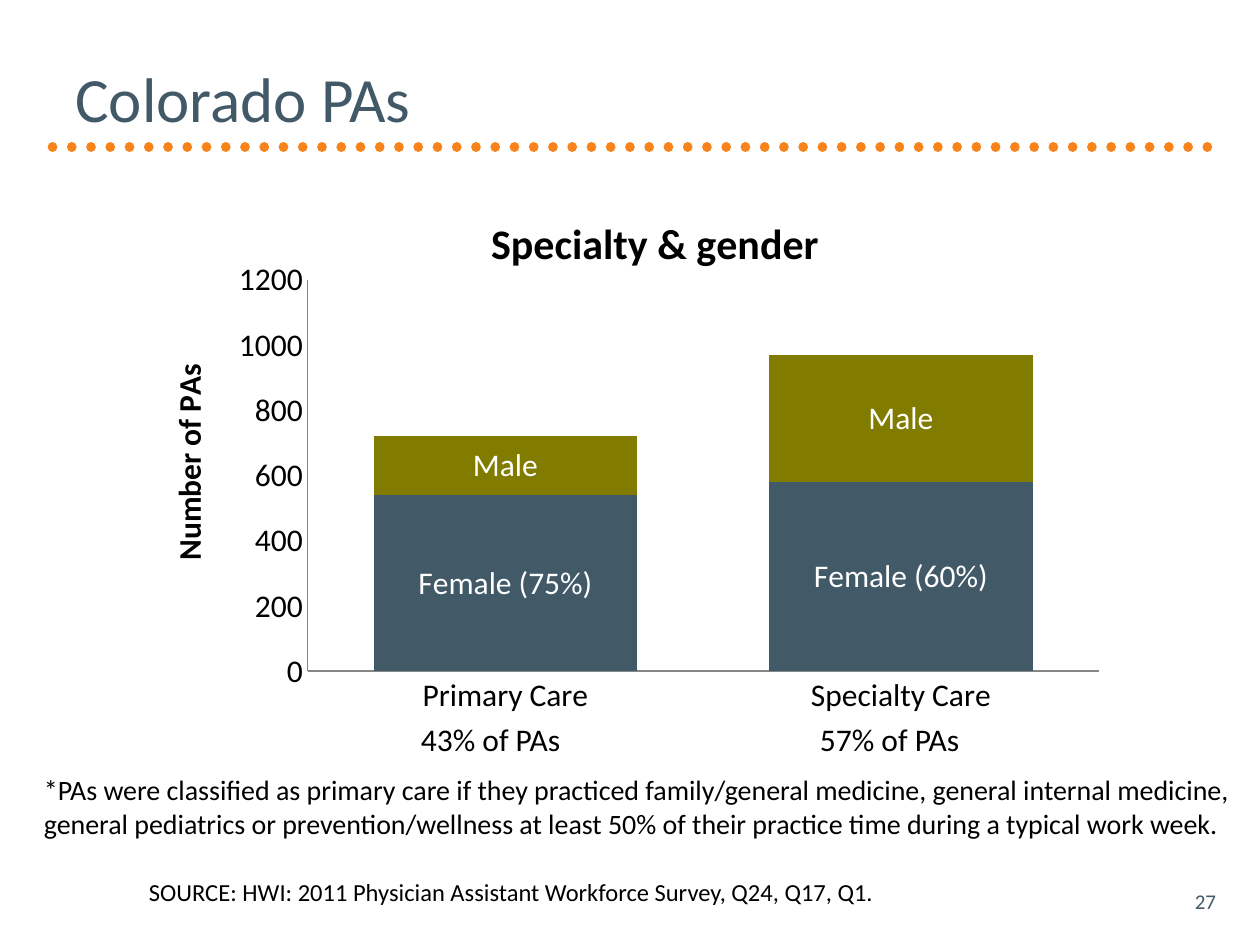
from dataclasses import dataclass

from lxml.etree import SubElement
from pptx import Presentation
from pptx.chart.data import CategoryChartData
from pptx.dml.color import RGBColor
from pptx.enum.chart import XL_CHART_TYPE as ChartType, XL_LABEL_POSITION as LabelPos
from pptx.enum.chart import XL_TICK_MARK as Tick
from pptx.enum.dml import MSO_LINE as Dash
from pptx.enum.shapes import MSO_CONNECTOR as Connector
from pptx.enum.text import MSO_ANCHOR as Anchor, MSO_AUTO_SIZE as AutoSize, PP_ALIGN as Align
from pptx.oxml import parse_xml
from pptx.oxml.ns import nsdecls, qn
from pptx.util import Pt

SLATE = RGBColor(0x42, 0x59, 0x68)
OLIVE = RGBColor(0x81, 0x7C, 0x00)
ORANGE = RGBColor(0xF7, 0x83, 0x1A)
BLACK = RGBColor(0, 0, 0)
WHITE = RGBColor(0xFF, 0xFF, 0xFF)
GRAY = RGBColor(0x86, 0x86, 0x86)
FONT = "Calibri"


@dataclass
class Label:
    text: str
    left: float
    top: float
    width: float
    height: float
    size: float
    color: RGBColor = BLACK
    align: Align = Align.LEFT
    anchor: Anchor = Anchor.TOP
    wrap: bool = True
    grow: bool = True


@dataclass
class Series:
    name: str
    values: tuple[int, ...]
    color: RGBColor
    point_labels: tuple[str, ...] = ()


LABELS = [
    Label("Colorado PAs", 36, 21.6, 648, 68.4, 36, SLATE, anchor=Anchor.MIDDLE, grow=False),
    Label("27", 534, 500.4, 168, 28.8, 12, SLATE, Align.RIGHT, Anchor.MIDDLE, grow=False),
    Label("*PAs were classified as primary care if they practiced family/general medicine, "
          "general internal medicine, general pediatrics or prevention/wellness at least 50% "
          "of their practice time during a typical work week.", 18, 438, 702, 46, 16),
    Label("SOURCE: HWI: 2011 Physician Assistant Workforce Survey, Q24, Q17, Q1.",
          78, 497.5, 540, 24.5, 14),
    Label("43% of PAs", 233.5, 408, 96.5, 29, 18, wrap=False),
    Label("57% of PAs", 461.5, 408, 96.5, 29, 18, wrap=False),
]
CATEGORIES = ("Primary Care", "Specialty Care")
SERIES = [
    Series("Female", (540, 580), SLATE, ("Female (75%)", "Female (60%)")),
    Series("Male", (180, 390), OLIVE),
]


def style(font, size: float, color: RGBColor, bold: bool = False) -> None:
    font.name, font.size, font.bold = FONT, Pt(size), bold
    font.color.rgb = color


def add_run(p, text: str, size: float, color: RGBColor, bold: bool = False) -> None:
    r = p.add_run()
    r.text = text
    style(r.font, size, color, bold)


def add_label(slide, label: Label) -> None:
    sp = slide.shapes.add_textbox(Pt(label.left), Pt(label.top), Pt(label.width), Pt(label.height))
    tf = sp.text_frame
    tf.word_wrap = label.wrap
    tf.auto_size = AutoSize.SHAPE_TO_FIT_TEXT if label.grow else AutoSize.NONE
    tf.vertical_anchor = label.anchor
    p = tf.paragraphs[0]
    p.alignment = label.align
    add_run(p, label.text, label.size, label.color)


def add_dotted_rule(slide) -> None:
    rule = slide.shapes.add_connector(Connector.STRAIGHT, Pt(30), Pt(84), Pt(696), Pt(84))
    rule.line.color.rgb = ORANGE
    rule.line.width = Pt(5.5)
    rule.line.dash_style = Dash.ROUND_DOT
    rule.line._get_or_add_ln().set("cap", "rnd")
    SubElement(rule._element.spPr, qn("a:effectLst"))


def set_layout(parent, index: int, **position: float) -> None:
    for old in parent.findall(qn("c:layout")):
        parent.remove(old)
    target = '<c:layoutTarget val="inner"/>' if "w" in position else ""
    modes = "".join(f'<c:{key}Mode val="edge"/>' for key in "xy")
    values = "".join(f'<c:{key} val="{value}"/>' for key, value in position.items())
    parent.insert(index, parse_xml(
        f'<c:layout {nsdecls("c")}><c:manualLayout>{target}{modes}{values}'
        '</c:manualLayout></c:layout>'))


def style_series(series, spec: Series) -> None:
    series.format.fill.solid()
    series.format.fill.fore_color.rgb = spec.color
    labels = series.data_labels
    labels.show_series_name, labels.show_value = True, False
    labels.position = LabelPos.CENTER
    style(labels.font, 18, WHITE)
    for i, text in enumerate(spec.point_labels):
        label = series.points[i].data_label
        add_run(label.text_frame.paragraphs[0], text, 18, WHITE)
        label.position = LabelPos.CENTER


def add_gender_chart(slide) -> None:
    data = CategoryChartData()
    data.categories = CATEGORIES
    for spec in SERIES:
        data.add_series(spec.name, spec.values)
    chart = slide.shapes.add_chart(
        ChartType.COLUMN_STACKED, Pt(81), Pt(96), Pt(558), Pt(319.5), data).chart
    style(chart.font, 18, BLACK)
    chart.has_legend = False
    chart.has_title = True
    add_run(chart.chart_title.text_frame.paragraphs[0], "Specialty & gender", 24, BLACK, True)

    for axis in (chart.category_axis, chart.value_axis):
        axis.major_tick_mark = axis.minor_tick_mark = Tick.NONE
        axis.has_major_gridlines = False
        axis.format.line.color.rgb = GRAY
        axis.format.line.width = Pt(0.75)
    value_axis = chart.value_axis
    value_axis.minimum_scale, value_axis.maximum_scale = 0, 1200
    value_axis.major_unit = 200
    value_axis.has_title = True
    add_run(value_axis.axis_title.text_frame.paragraphs[0], "Number of PAs", 18, BLACK, True)
    value_axis.axis_title.text_frame._txBody.bodyPr.set("rot", "-5400000")

    plot = chart.plots[0]
    plot.gap_width, plot.overlap = 50, 100
    plot.vary_by_categories = False
    for series, spec in zip(plot.series, SERIES):
        style_series(series, spec)

    set_layout(chart.chart_title._element, 1, x=0.35, y=0.07)
    set_layout(value_axis.axis_title._element, 1, x=0.02, y=0.34)
    plot_area = chart._chartSpace.chart.plotArea
    set_layout(plot_area, 0, x=0.17, y=0.2, w=0.81, h=0.7)


def main() -> None:
    prs = Presentation()
    prs.slide_width, prs.slide_height = Pt(720), Pt(540)
    slide = prs.slides.add_slide(prs.slide_layouts[6])
    add_dotted_rule(slide)
    add_gender_chart(slide)
    for label in LABELS:
        add_label(slide, label)
    prs.save("out.pptx")


if __name__ == "__main__":
    main()
